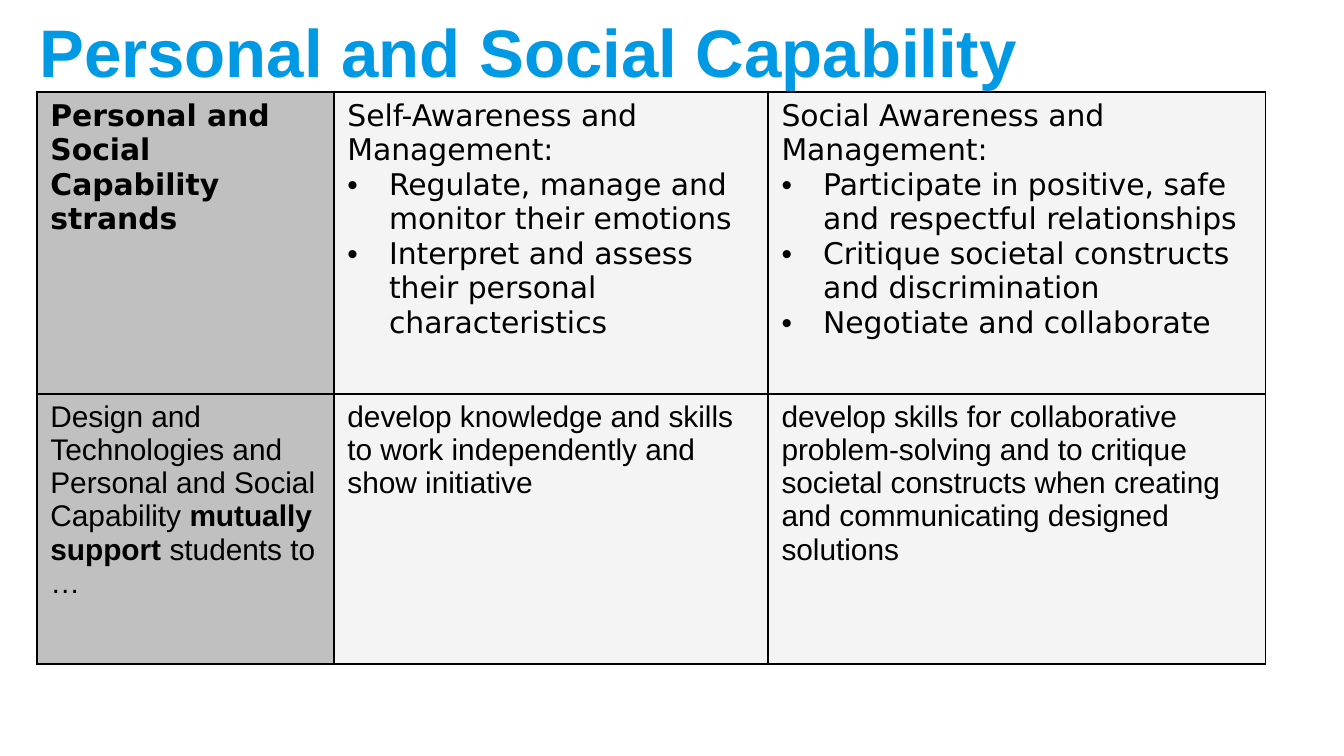
from pptx import Presentation
from pptx.dml.color import RGBColor
from pptx.enum.text import MSO_ANCHOR
from pptx.oxml import parse_xml
from pptx.oxml.ns import nsdecls, qn
from pptx.util import Pt
from lxml.etree import SubElement

PX = 4572
BLUE = RGBColor(0x00, 0x99, 0xE3)
BLACK = RGBColor(0x00, 0x00, 0x00)
GREY = RGBColor(0xC0, 0xC0, 0xC0)
PALE = RGBColor(0xF4, 0xF4, 0xF4)

TITLE = {"name": "Arial", "size": Pt(36), "bold": True}
STRAND = {"name": "DejaVu Sans", "size": Pt(16), "bold": False}
BODY = {"name": "Arial", "size": Pt(16), "bold": False}

COLS = [442, 646, 740]
ROWS = [449, 402]
CELLS = [
    [
        [[("Personal and Social Capability strands", True)]],
        [
            [("Self-Awareness and Management:", False)],
            "Regulate, manage and monitor their emotions",
            "Interpret and assess their personal characteristics",
        ],
        [
            [("Social Awareness and Management:", False)],
            "Participate in positive, safe and respectful relationships",
            "Critique societal constructs and discrimination",
            "Negotiate and collaborate",
        ],
    ],
    [
        [[
            ("Design and Technologies and Personal and Social Capability ", False),
            ("mutually support ", True),
            ("students to …", False),
        ]],
        [[("develop knowledge and skills to work independently and show initiative", False)]],
        [[("develop skills for collaborative problem-solving and to critique societal "
           "constructs when creating and communicating designed solutions", False)]],
    ],
]


def add_run(p, text, fmt, color):
    r = p.add_run()
    r.text = text
    for key, value in fmt.items():
        setattr(r.font, key, value)
    r.font.color.rgb = color


def add_bullet(p):
    pPr = p._p.get_or_add_pPr()
    pPr.set("marL", str(62 * PX))
    pPr.set("indent", str(-62 * PX))
    SubElement(pPr, qn("a:buFont")).set("typeface", "Arial")
    SubElement(pPr, qn("a:buChar")).set("char", "•")


def add_borders(cell):
    tcPr = cell._tc.get_or_add_tcPr()
    for i, side in enumerate(("lnL", "lnR", "lnT", "lnB")):
        tcPr.insert(i, parse_xml(
            f'<a:{side} {nsdecls("a")} w="{Pt(1)}"><a:solidFill>'
            f'<a:srgbClr val="{BLACK}"/></a:solidFill></a:{side}>'))


def fill_cell(cell, paragraphs, fmt, color):
    cell.fill.solid()
    cell.fill.fore_color.rgb = color
    add_borders(cell)
    tf = cell.text_frame
    for i, content in enumerate(paragraphs):
        p = tf.add_paragraph() if i else tf.paragraphs[0]
        if isinstance(content, str):
            add_bullet(p)
            content = [(content, False)]
        for text, bold in content:
            add_run(p, text, {**fmt, "bold": bold}, BLACK)


def add_title(s, x, y, w, h):
    tf = s.shapes.add_textbox(x * PX, y * PX, w * PX, h * PX).text_frame
    frame = {"word_wrap": True, "vertical_anchor": MSO_ANCHOR.MIDDLE,
             "margin_top": 0, "margin_bottom": 0}
    for key, value in frame.items():
        setattr(tf, key, value)
    add_run(tf.paragraphs[0], "Personal and Social Capability", TITLE, BLUE)


def add_strands_table(s, x, y):
    table = s.shapes.add_table(len(ROWS), len(COLS), x * PX, y * PX,
                               sum(COLS) * PX, sum(ROWS) * PX).table
    table.first_row = table.horz_banding = False
    for col, width in zip(table.columns, COLS):
        col.width = width * PX
    for i, (row, height, fmt) in enumerate(zip(table.rows, ROWS, (STRAND, BODY))):
        row.height = height * PX
        for j, cell in enumerate(row.cells):
            fill_cell(cell, CELLS[i][j], fmt, PALE if j else GREY)


def main():
    prs = Presentation()
    prs.slide_width, prs.slide_height = 2000 * PX, 1125 * PX
    s = prs.slides.add_slide(prs.slide_layouts[6])
    add_title(s, 39, 43, 1906, 66)
    add_strands_table(s, 55, 137)
    prs.save("out.pptx")


if __name__ == "__main__":
    main()
